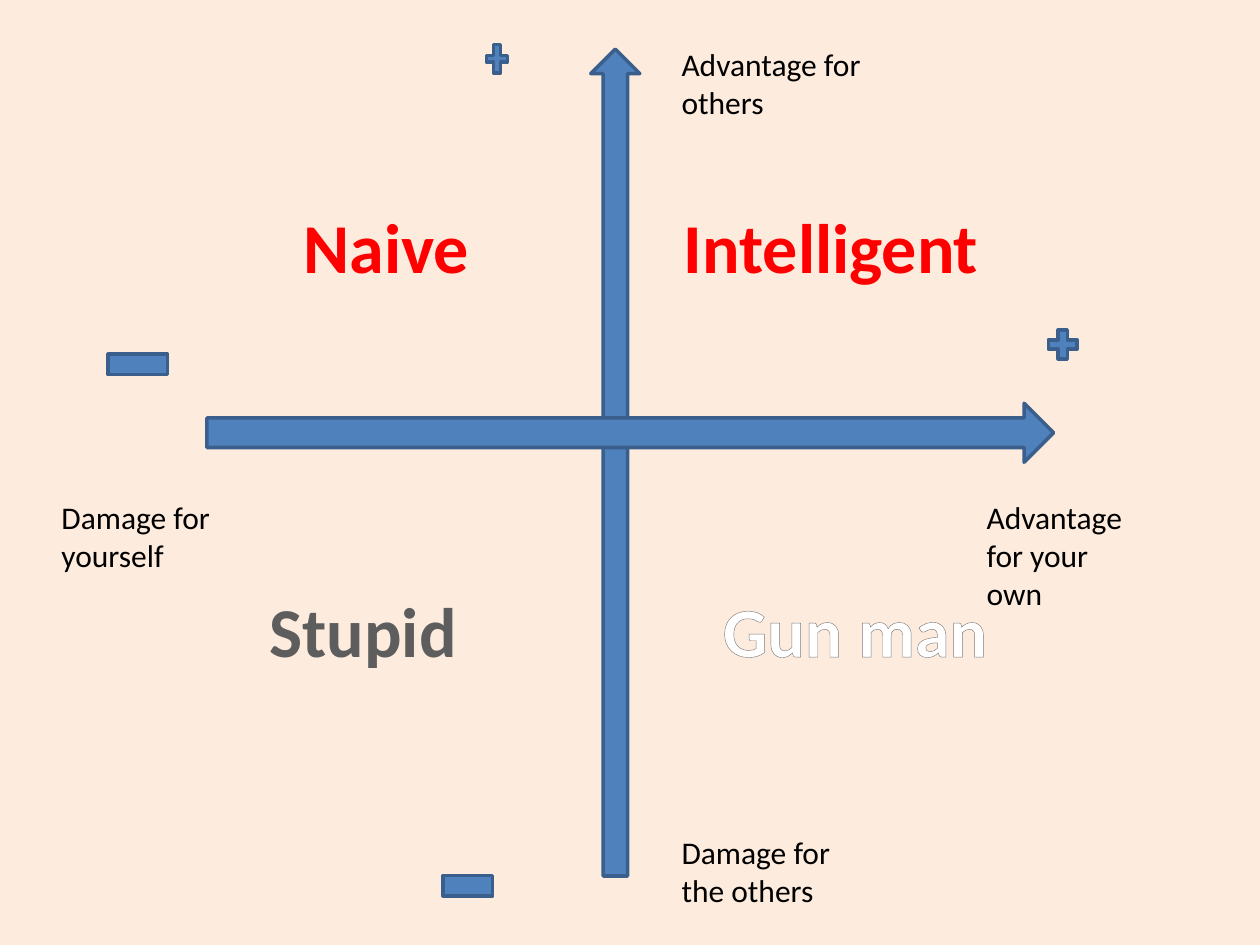
import pptx
import pptx.dml.color
import pptx.enum.shapes
import pptx.enum.text
import pptx.oxml.ns
import pptx.util
from lxml import etree

Cm = pptx.util.Cm
RGBColor = pptx.dml.color.RGBColor
MSO_SHAPE = pptx.enum.shapes.MSO_SHAPE
PP_ALIGN = pptx.enum.text.PP_ALIGN

CREAM = RGBColor(0xFD, 0xEB, 0xDD)
BLUE = RGBColor(0x4F, 0x81, 0xBD)
DARK_BLUE = RGBColor(0x3A, 0x5F, 0x8C)
BLACK = RGBColor(0x00, 0x00, 0x00)
WHITE = RGBColor(0xFF, 0xFF, 0xFF)
RED = RGBColor(0xFF, 0x00, 0x00)
GREY = RGBColor(0x5D, 0x5D, 0x5D)
OUTLINE_RED = RGBColor(0xD7, 0x3A, 0x36)
OUTLINE_GREY = RGBColor(0x7D, 0x7D, 0x7D)

deck = pptx.Presentation()
deck.slide_width = Cm(25.4)
deck.slide_height = Cm(19.05)
page = deck.slides.add_slide(deck.slide_layouts[6])
page.background.fill.solid()
page.background.fill.fore_color.rgb = CREAM


def add_text(text, place, size=18, color=BLACK, bold=False,
             align=PP_ALIGN.LEFT, wrap=True, outline=None, outline_width=1.4):
    box = page.shapes.add_textbox(*[Cm(length) for length in place])
    box.text_frame.word_wrap = wrap
    para = box.text_frame.paragraphs[0]
    para.alignment = align
    span = para.add_run()
    span.text = text
    span.font.name = "Calibri"
    span.font.size = pptx.util.Pt(size)
    span.font.bold = bold
    span.font.color.rgb = color
    if outline is not None:
        # The letter outline has to come before the fill
        qn = pptx.oxml.ns.qn
        line = etree.Element(qn("a:ln"), w=str(pptx.util.Pt(outline_width)))
        fill = etree.SubElement(line, qn("a:solidFill"))
        etree.SubElement(fill, qn("a:srgbClr"), val=str(outline))
        span.font._element.insert(0, line)


# Axes and their plus and minus signs
symbols = [
    (MSO_SHAPE.UP_ARROW, (11.91, 0.99, 0.99, 16.67)),
    (MSO_SHAPE.RIGHT_ARROW, (4.17, 8.13, 17.07, 1.19)),
    (MSO_SHAPE.MATH_PLUS, (9.73, 0.79, 0.58, 0.79)),
    (MSO_SHAPE.FLOWCHART_PROCESS, (8.93, 17.65, 1, 0.41)),
    (MSO_SHAPE.MATH_PLUS, (21.03, 6.55, 0.79, 0.79)),
    (MSO_SHAPE.FLOWCHART_PROCESS, (2.18, 7.14, 1.2, 0.41)),
]
for kind, place in symbols:
    symbol = page.shapes.add_shape(kind, *[Cm(length) for length in place])
    symbol.shadow.inherit = False
    symbol.fill.solid()
    symbol.fill.fore_color.rgb = BLUE
    symbol.line.color.rgb = DARK_BLUE
    symbol.line.width = pptx.util.Pt(2)

# Axis labels
labels = [
    ("Advantage for others", (13.49, 0.79, 4.37, 1.8)),
    ("Damage for the others", (13.49, 16.67, 3.57, 1.8)),
    ("Advantage for your own", (19.64, 9.92, 3.37, 2.56)),
    ("Damage for yourself", (0.99, 9.92, 4.76, 1.8)),
]
for text, place in labels:
    # Keep the left label on two lines
    if text == "Damage for yourself":
        place = (0.99, 9.92, 4.2, 1.8)
    add_text(text, place)

# Quadrant names
quadrants = [
    ("Naive", (3.37, 3.97, 8.84, 1.96), RED, True, OUTLINE_RED, 1.42),
    ("Intelligent", (13.49, 3.97, 6.53, 1.96), RED, False, None, 0),
    ("Gun man", (14.29, 11.71, 5.89, 3.68), WHITE, False, OUTLINE_GREY, 0.83),
    ("Stupid", (5.16, 11.71, 4.32, 1.96), GREY, False, WHITE, 1.4),
]
for text, place, color, wrap, outline, width in quadrants:
    add_text(text, place, size=40, color=color, bold=True, wrap=wrap,
             align=PP_ALIGN.CENTER, outline=outline, outline_width=width)

deck.save("out.pptx")
